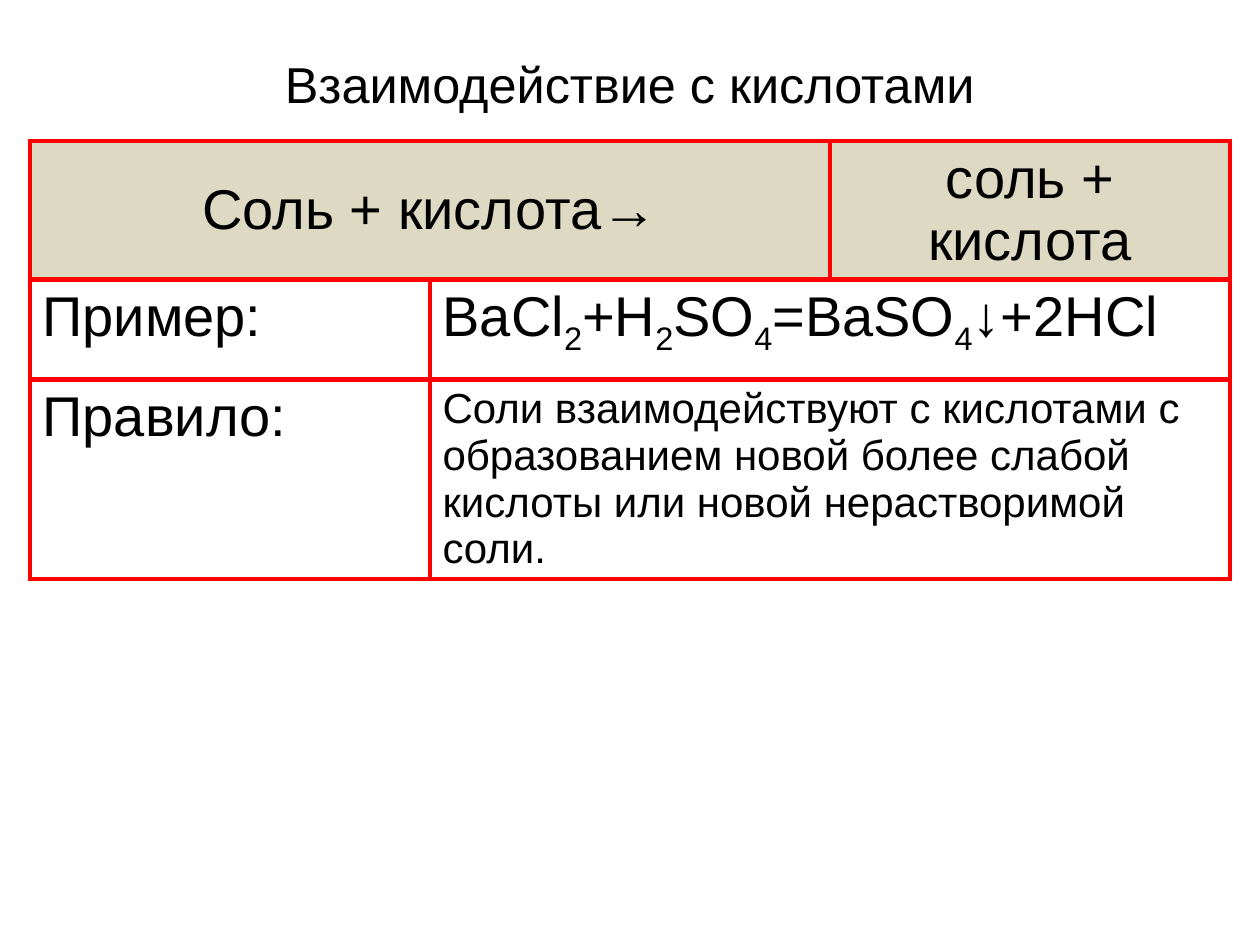
"""Build a slide on how salts react with acids."""
import lxml.etree
import pptx
import pptx.dml.color
import pptx.enum.text
import pptx.oxml.ns
import pptx.util
from dataclasses import dataclass


@dataclass(frozen=True)
class Theme:
    font: str = "Arial"
    text: str = "000000"
    border: str = "FF0000"
    header: str = "DDD9C3"
    border_width: float = 3
    title_size: float = 28.8
    large_size: float = 32
    body_size: float = 24


theme = Theme()
CENTER = pptx.enum.text.PP_ALIGN.CENTER
LEFT = pptx.enum.text.PP_ALIGN.LEFT
MIDDLE = pptx.enum.text.MSO_ANCHOR.MIDDLE
TOP = pptx.enum.text.MSO_ANCHOR.TOP


def px(length):
    return pptx.util.Emu(round(length * 914400 / 126))


def write_text(frame, text, size=theme.large_size, align=LEFT, anchor=TOP):
    frame.word_wrap = True
    frame.vertical_anchor = anchor
    paragraph = frame.paragraphs[0]
    paragraph.alignment = align
    for index, part in enumerate(text.split("_")):
        run = paragraph.add_run()
        run.text = part
        run.font.name = theme.font
        run.font.size = pptx.util.Pt(size)
        run.font.color.rgb = pptx.dml.color.RGBColor.from_string(theme.text)
        if index % 2:
            run._r.get_or_add_rPr().set("baseline", "-25000")


presentation = pptx.Presentation()
presentation.slide_width = px(1260)
presentation.slide_height = px(945)
slide = presentation.slides.add_slide(presentation.slide_layouts[5])

title = slide.shapes.title
title.left, title.top, title.width, title.height = map(px, (246, 38, 768, 91))
geometry = lxml.etree.SubElement(
    title._element.spPr, pptx.oxml.ns.qn("a:prstGeom"), prst="roundRect")
lxml.etree.SubElement(geometry, pptx.oxml.ns.qn("a:avLst"))
write_text(title.text_frame, "Взаимодействие с кислотами",
           size=theme.title_size, align=CENTER, anchor=MIDDLE)

column_width = 400
row_heights = (125, 100, 180)
table_frame = slide.shapes.add_table(
    3, 3, px(30), px(141), px(3 * column_width), px(461))
table = table_frame.table
table.first_row = False
table.horz_banding = False
for column in table.columns:
    column.width = px(column_width)
for row, height in zip(table.rows, row_heights):
    row.height = px(height)
table_frame.height = px(461)

for cell in table.iter_cells():
    properties = cell._tc.get_or_add_tcPr()
    for side in ("lnL", "lnR", "lnT", "lnB"):
        line = lxml.etree.SubElement(properties, pptx.oxml.ns.qn(f"a:{side}"))
        line.set("w", str(pptx.util.Pt(theme.border_width)))
        fill = lxml.etree.SubElement(line, pptx.oxml.ns.qn("a:solidFill"))
        color = lxml.etree.SubElement(fill, pptx.oxml.ns.qn("a:srgbClr"))
        color.set("val", theme.border)
    cell.fill.background()

for cell in table.rows[0].cells:
    cell.fill.solid()
    cell.fill.fore_color.rgb = pptx.dml.color.RGBColor.from_string(theme.header)

for row, first in enumerate((0, 1, 1)):
    table.cell(row, first).merge(table.cell(row, first + 1))

header = {"align": CENTER, "anchor": MIDDLE}
rule = ("Соли взаимодействуют с кислотами с образованием новой более слабой "
        "кислоты или новой нерастворимой соли.")
contents = (
    (0, 0, "Соль + кислота→", header),
    (0, 2, "соль + кислота", header),
    (1, 0, "Пример:", {}),
    (1, 1, "BaCl_2_+H_2_SO_4_=BaSO_4_↓+2HCl", {}),
    (2, 0, "Правило:", {}),
    (2, 1, rule, {"size": theme.body_size}),
)
for row, column, text, style in contents:
    cell = table.cell(row, column)
    write_text(cell.text_frame, text, **style)
    cell.vertical_anchor = style.get("anchor", TOP)

presentation.save("out.pptx")
